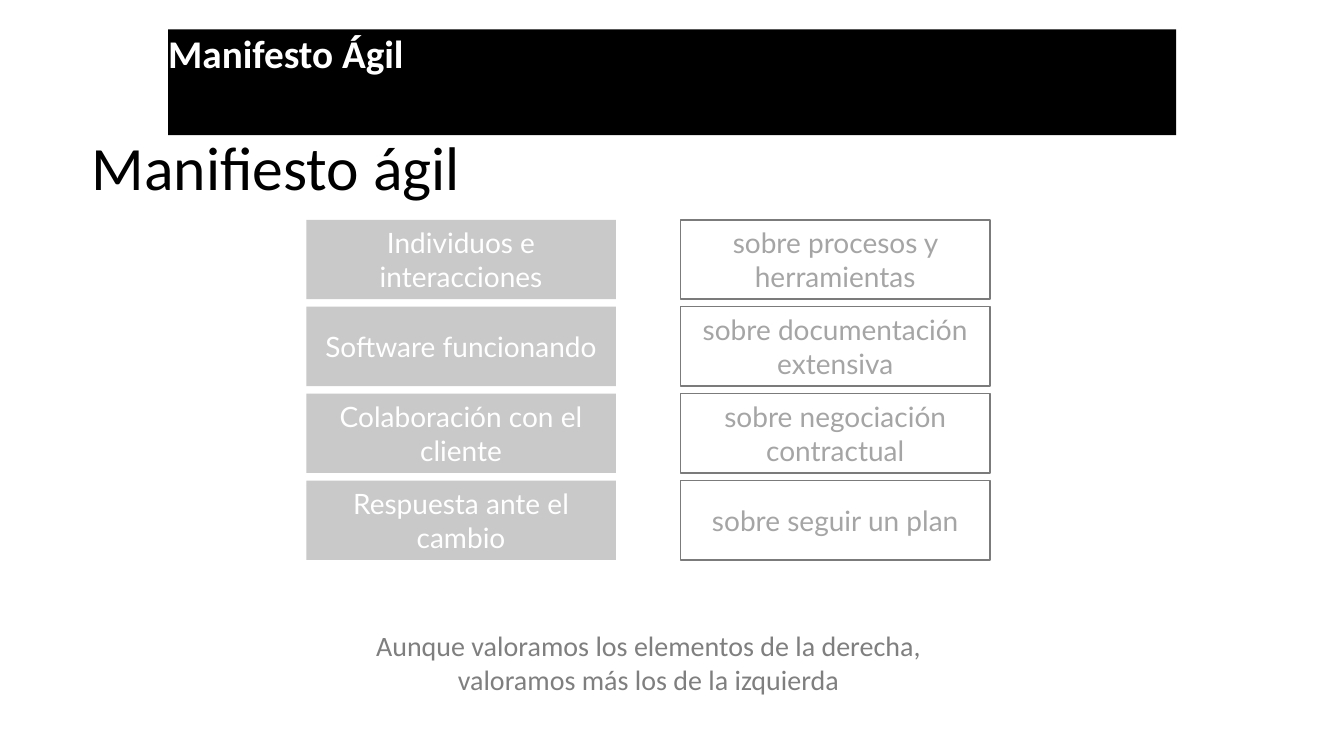
"""Build the slide on the four values of the agile manifesto."""
from pptx import Presentation
from pptx.dml.color import RGBColor
from pptx.enum.shapes import MSO_SHAPE as Shape
from pptx.enum.text import MSO_ANCHOR as Anchor, PP_ALIGN as Align
from pptx.util import Cm, Pt

BANNER = "Manifesto Ágil"
TITLE = "Manifiesto ágil"
VALUES = [
    ("Individuos e interacciones", "sobre procesos y herramientas"),
    ("Software funcionando", "sobre documentación extensiva"),
    ("Colaboración con el cliente", "sobre negociación contractual"),
    ("Respuesta ante el cambio", "sobre seguir un plan"),
]
CLOSING = ("Aunque valoramos los elementos de la derecha, "
           "valoramos más los de la izquierda")

BLACK = RGBColor(0x00, 0x00, 0x00)
WHITE = RGBColor(0xFF, 0xFF, 0xFF)
SILVER = RGBColor(0xC9, 0xC9, 0xC9)
PALE_GRAY = RGBColor(0xA5, 0xA5, 0xA5)
MID_GRAY = RGBColor(0x7F, 0x7F, 0x7F)
BORDER_GRAY = RGBColor(0x7B, 0x7B, 0x7B)

LEFT_COLUMN, RIGHT_COLUMN = 7.72, 17.15
FIRST_ROW, ROW_PITCH = 5.54, 2.19
VALUE_WIDTH, VALUE_HEIGHT = 7.8, 2


def write(box, text, size, color, font="Calibri", align=Align.LEFT,
          anchor=Anchor.TOP):
    frame = box.text_frame
    frame.word_wrap = True
    frame.vertical_anchor = anchor
    paragraph = frame.paragraphs[0]
    paragraph.text = text
    paragraph.alignment = align
    paragraph.font.name = font
    paragraph.font.size = Pt(size)
    paragraph.font.color.rgb = color
    return paragraph


def add_box(slide, place, fill, border=None):
    box = slide.shapes.add_shape(Shape.RECTANGLE, *map(Cm, place))
    box.shadow.inherit = False
    box.fill.solid()
    box.fill.fore_color.rgb = fill
    if border is None:
        box.line.fill.background()
    else:
        box.line.color.rgb = border
        box.line.width = Pt(1)
    return box


def add_value(slide, text, left, row, fill, color, border=None):
    top = FIRST_ROW + row * ROW_PITCH
    box = add_box(slide, (left, top, VALUE_WIDTH, VALUE_HEIGHT), fill, border)
    write(box, text, 20, color, "Lato", Align.CENTER, Anchor.MIDDLE)


def add_text(slide, place, *args, **options):
    return write(slide.shapes.add_textbox(*map(Cm, place)), *args, **options)


def main():
    deck = Presentation()
    deck.slide_width, deck.slide_height = Cm(33.87), Cm(19.05)
    slide = deck.slides.add_slide(deck.slide_layouts[6])

    for row, (valued_more, valued_less) in enumerate(VALUES):
        add_value(slide, valued_more, LEFT_COLUMN, row, SILVER, WHITE)
        add_value(slide, valued_less, RIGHT_COLUMN, row, WHITE, PALE_GRAY,
                  BORDER_GRAY)

    title = add_text(slide, (2.06, 2.46, 29.21, 3.68), TITLE, 44, BLACK,
                     anchor=Anchor.MIDDLE)
    title.line_spacing = 0.9
    add_text(slide, (8.94, 15.72, 14.81, 1.8), CLOSING, 20, MID_GRAY,
             align=Align.CENTER)

    banner = add_box(slide, (4.24, 0.74, 25.4, 2.67), BLACK)
    write(banner, BANNER, 28, WHITE).font.bold = True
    frame = banner.text_frame
    frame.margin_left = frame.margin_right = 0
    frame.margin_top = frame.margin_bottom = 0

    deck.save("out.pptx")


if __name__ == "__main__":
    main()
